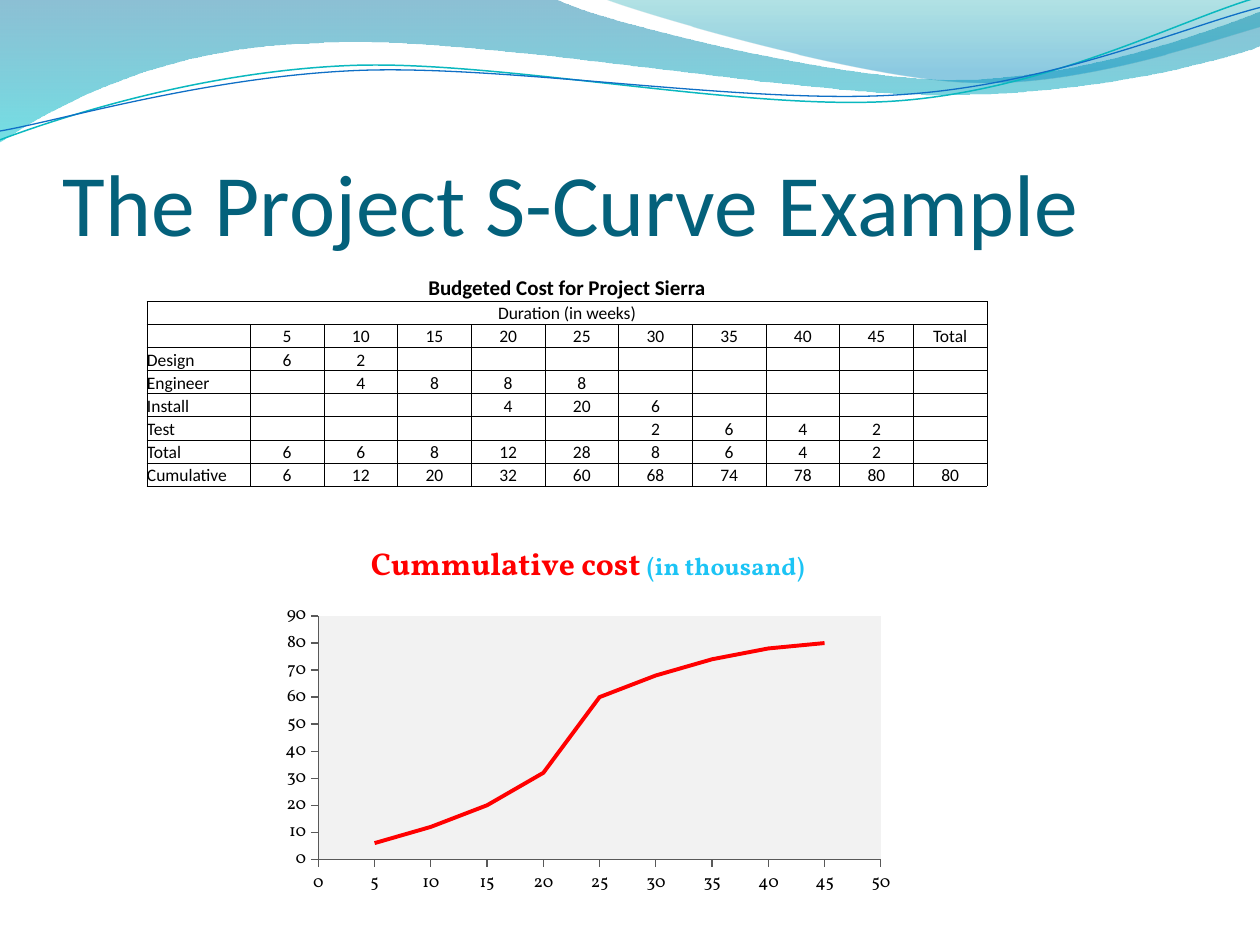
from dataclasses import dataclass
from math import cos, radians, sin
from typing import Optional

from lxml.etree import SubElement
from pptx import Presentation
from pptx.chart.data import XyChartData
from pptx.dml.color import RGBColor
from pptx.enum.chart import XL_CHART_TYPE, XL_TICK_MARK
from pptx.enum.text import MSO_ANCHOR, PP_ALIGN
from pptx.oxml import parse_xml
from pptx.oxml.ns import nsdecls, qn
from pptx.util import Emu, Inches, Pt

COLORS = {
    "title": "04617B", "black": "000000", "red": "FF0000", "sky": "1CC4F5",
    "plot": "F2F2F2", "axis": "595959", "teal_line": "0AB8BF", "blue_line": "0F6FC6",
    "deep": "0074A1", "aqua": "00C6CF", "sea": "00A1A9", "azure": "008BBF",
}
COLS, ROWS = 60, 45
TILT = -2.7


@dataclass
class Stop:
    pos: int
    color: str
    alpha: int


@dataclass
class Wave:
    segments: list[tuple[float, ...]]
    stops: Optional[list[Stop]] = None
    line: str = ""
    width: float = 0
    center: Optional[tuple[float, float]] = None


@dataclass
class Box:
    col: float
    row: float
    cols: float
    rows: float

    def emu(self) -> list[Emu]:
        return [Emu(round(v)) for v in (self.col * CELL_W, self.row * CELL_H,
                                        self.cols * CELL_W, self.rows * CELL_H)]


WAVES = [
    Wave([(0, 0), (4.4, -0.01), (4.76, 0.17, 6.64, 0.63, 7.58, 0.63),
          (8.53, 0.63, 9.58, 0.26, 10, 0.09), (10.01, 0.36),
          (9.83, 0.44, 8.7, 0.76, 7.46, 0.75), (6.22, 0.75, 3.82, 0.28, 2.57, 0.34),
          (1.29, 0.36, 0.46, 0.83, -0.01, 1.13), (0, 0)],
         stops=[Stop(0, "deep", 45), Stop(100, "aqua", 55)]),
    Wave([(4.79, -0.01), (5.09, 0.11, 6.82, 0.62, 7.69, 0.65),
          (8.56, 0.69, 9.61, 0.32, 10, 0.21), (10, 0), (4.79, -0.01)],
         stops=[Stop(0, "sea", 30), Stop(80, "azure", 45)]),
    Wave([(0, 1.11), (0.48, 0.93, 1.58, 0.57, 2.77, 0.52),
          (3.95, 0.47, 5.93, 0.89, 7.13, 0.8), (8.33, 0.71, 9.38, 0.15, 9.98, -0.02)],
         line="teal_line", width=0.85, center=(4.99, 0.58)),
    Wave([(0, 1.04), (0.47, 0.96, 1.64, 0.61, 2.83, 0.56),
          (4.03, 0.51, 5.97, 0.84, 7.17, 0.75), (8.36, 0.67, 9.41, 0.21, 10, 0.06)],
         line="blue_line", width=0.75, center=(5, 0.59)),
]

WEEKS = list(range(5, 50, 5))
CUMULATIVE = [6, 12, 20, 32, 60, 68, 74, 78, 80]
BUDGET = [
    ["Budgeted Cost for Project Sierra"],
    ["Duration (in weeks)"],
    ["", *WEEKS, "Total"],
    ["Design", 6, 2],
    ["Engineer", "", 4, 8, 8, 8],
    ["Install", "", "", "", 4, 20, 6],
    ["Test", "", "", "", "", "", 2, 6, 4, 2],
    ["Total", 6, 6, 8, 12, 28, 8, 6, 4, 2],
    ["Cumulative", *CUMULATIVE, CUMULATIVE[-1]],
]

prs = Presentation()
prs.slide_width, prs.slide_height = Inches(10), Inches(7.5)
CELL_W, CELL_H = prs.slide_width / COLS, prs.slide_height / ROWS
TENTH = prs.slide_width / 10
s = prs.slides.add_slide(prs.slide_layouts[6])


def rgb(name: str) -> RGBColor:
    return RGBColor.from_string(COLORS[name])


def add_run(p, text: str, font: str, size: float, color: str, bold: bool = False) -> None:
    r = p.add_run()
    r.text = text
    r.font.name, r.font.size, r.font.bold = font, Pt(size), bold
    r.font.color.rgb = rgb(color)


def level(x: float, y: float, center: tuple[float, float]) -> tuple[float, float]:
    dx, dy, a = x - center[0], y - center[1], radians(-TILT)
    return center[0] + dx * cos(a) - dy * sin(a), center[1] + dx * sin(a) + dy * cos(a)


def bend(sp, segments: list[tuple[float, ...]]) -> None:
    outline = sp._element.spPr.find(".//" + qn("a:path"))
    lines = iter(outline.findall(qn("a:lnTo")))
    for seg in segments[1:]:
        steps = [next(lines) for _ in range(len(seg) // 2)]
        if len(steps) == 3:
            curve = parse_xml(f'<a:cubicBezTo {nsdecls("a")}/>')
            steps[0].addprevious(curve)
            for step in steps:
                curve.append(step[0])
                outline.remove(step)


def draw_wave(wave: Wave) -> None:
    points = [seg[i:i + 2] for seg in wave.segments for i in range(0, len(seg), 2)]
    if wave.center:
        points = [level(x, y, wave.center) for x, y in points]
    points = [(x * TENTH, y * TENTH) for x, y in points]
    fb = s.shapes.build_freeform(*points[0])
    fb.add_line_segments(points[1:], close=bool(wave.stops))
    sp = fb.convert_to_shape()
    bend(sp, wave.segments)
    sp.shadow.inherit = False
    sp.fill.background()
    if not wave.stops:
        sp.rotation = TILT
        sp.line.color.rgb, sp.line.width = rgb(wave.line), Pt(wave.width)
        return
    sp.line.fill.background()
    stops = "".join(
        f'<a:gs pos="{g.pos * 1000}"><a:srgbClr val="{COLORS[g.color]}">'
        f'<a:alpha val="{g.alpha * 1000}"/></a:srgbClr></a:gs>' for g in wave.stops)
    no_fill = sp._element.spPr.find(qn("a:noFill"))
    no_fill.getparent().replace(no_fill, parse_xml(
        f'<a:gradFill {nsdecls("a")}><a:gsLst>{stops}</a:gsLst>'
        '<a:lin ang="5400000" scaled="0"/></a:gradFill>'))


def draw_title(box: Box, text: str) -> None:
    tf = s.shapes.add_textbox(*box.emu()).text_frame
    tf.word_wrap = True
    tf.vertical_anchor = MSO_ANCHOR.BOTTOM
    tf.margin_left = tf.margin_right = tf.margin_bottom = 0
    add_run(tf.paragraphs[0], text, "Calibri", 50, "title")


def set_borders(cell, visible: str) -> None:
    tc_pr = cell._tc.get_or_add_tcPr()
    for i, side in enumerate("LRTB"):
        paint = (f'<a:solidFill><a:srgbClr val="{COLORS["black"]}"/></a:solidFill>'
                 if side in visible else "<a:noFill/>")
        tc_pr.insert(i, parse_xml(f'<a:ln{side} {nsdecls("a")} w="6350">{paint}</a:ln{side}>'))


def draw_table(box: Box, rows: list[list]) -> None:
    n_cols = len(WEEKS) + 2
    table = s.shapes.add_table(len(rows), n_cols, *box.emu()).table
    table.first_row = table.horz_banding = False
    label_w, head_h, row_h = 4.92, 1.36, 1.1
    for j, column in enumerate(table.columns):
        column.width = Emu(round(CELL_W * (label_w if j == 0 else (box.cols - label_w) / (n_cols - 1))))
    for i, row in enumerate(rows):
        table.rows[i].height = Emu(round(CELL_H * (row_h if i else head_h)))
        if len(row) == 1:
            table.cell(i, 0).merge(table.cell(i, n_cols - 1))
        for j in range(n_cols):
            cell = table.cell(i, j)
            cell.margin_left = cell.margin_right = cell.margin_top = cell.margin_bottom = 0
            cell.vertical_anchor = MSO_ANCHOR.BOTTOM
            cell.fill.background()
            set_borders(cell, "LRTB" if i else "B")
            p = cell.text_frame.paragraphs[0]
            p.alignment = PP_ALIGN.LEFT if j == 0 and len(row) > 1 else PP_ALIGN.CENTER
            text = str(row[j]) if j < len(row) else ""
            if text:
                add_run(p, text, "Calibri", 10 if i else 12, "black", i == 0)
            else:
                SubElement(p._p, qn("a:endParaRPr"), sz="1000")


def style_axis(axis, top: int, step: int) -> None:
    axis.minimum_scale, axis.maximum_scale, axis.major_unit = 0, top, step
    axis.has_major_gridlines = False
    axis.major_tick_mark, axis.minor_tick_mark = XL_TICK_MARK.OUTSIDE, XL_TICK_MARK.NONE
    axis.format.line.color.rgb, axis.format.line.width = rgb("axis"), Pt(0.75)


def draw_chart(box: Box) -> None:
    data = XyChartData()
    series = data.add_series("Series 1")
    for week, cost in zip(WEEKS, CUMULATIVE):
        series.add_data_point(week, cost)
    chart = s.shapes.add_chart(XL_CHART_TYPE.XY_SCATTER_LINES_NO_MARKERS, *box.emu(), data).chart
    chart.has_legend = False
    chart.font.name, chart.font.size, chart.font.color.rgb = "Vollkorn", Pt(10), rgb("black")
    p = chart.chart_title.text_frame.paragraphs[0]
    add_run(p, "Cummulative cost ", "Vollkorn", 18, "red", True)
    add_run(p, "(in thousand)", "Vollkorn", 14, "sky", True)
    chart.chart_title.include_in_layout = False
    style_axis(chart.category_axis, 50, 5)
    style_axis(chart.value_axis, 90, 10)
    plot = chart.plots[0]
    plot.vary_by_categories = False
    line = plot.series[0]
    line.smooth = False
    line.format.line.color.rgb, line.format.line.width = rgb("red"), Pt(2.25)
    area = chart._chartSpace.chart.plotArea
    for old in area.findall(qn("c:layout")):
        area.remove(old)
    percents = {"x": 7.2, "y": 24.1, "w": 89.3, "h": 64.4}
    shares = "".join(f'<c:{k} val="{v / 100}"/>' for k, v in percents.items())
    area.insert(0, parse_xml(
        f'<c:layout {nsdecls("c")}><c:manualLayout><c:layoutTarget val="inner"/>'
        f'<c:xMode val="edge"/><c:yMode val="edge"/>{shares}</c:manualLayout></c:layout>'))
    area.append(parse_xml(
        f'<c:spPr {nsdecls("c", "a")}><a:solidFill><a:srgbClr val="{COLORS["plot"]}"/>'
        '</a:solidFill><a:ln><a:noFill/></a:ln></c:spPr>'))


for wave in WAVES:
    draw_wave(wave)
draw_title(Box(3, 4.6, 54, 7.5), "The Project S-Curve Example")
draw_table(Box(7, 13, 40, 10.16), BUDGET)
draw_chart(Box(13, 25, 30, 18))
prs.save("out.pptx")
